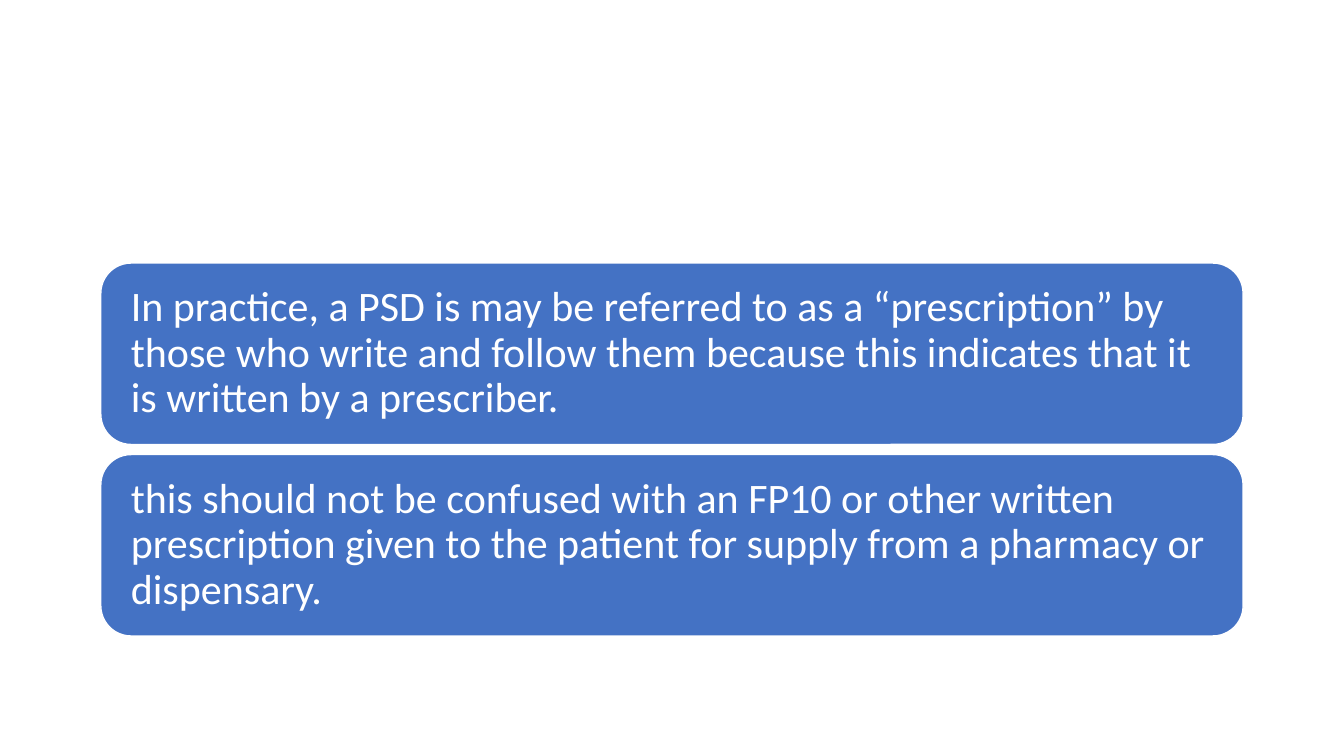
from pptx import Presentation
from pptx.dml.color import RGBColor
from pptx.enum.shapes import MSO_SHAPE
from pptx.enum.text import MSO_ANCHOR, PP_ALIGN
from pptx.util import Inches, Pt

COLORS = {"card": "4472C4", "white": "FFFFFF"}
STATEMENTS = [
    "In practice, a PSD is may be referred to as a “prescription” by those who write "
    "and follow them because this indicates that it is written by a prescriber.",
    "this should not be confused with an FP10 or other written prescription given to "
    "the patient for supply from a pharmacy or dispensary.",
]


def color(name):
    return RGBColor.from_string(COLORS[name])


def write_text(frame, text, *, size, font, ink, inset, line_spacing):
    frame.word_wrap = True
    frame.vertical_anchor = MSO_ANCHOR.MIDDLE
    frame.margin_left = frame.margin_right = Inches(inset)
    frame.margin_top = frame.margin_bottom = Inches(inset)
    paragraph = frame.paragraphs[0]
    paragraph.alignment = PP_ALIGN.LEFT
    paragraph.line_spacing = line_spacing
    run = paragraph.add_run()
    run.text = text
    run.font.size = Pt(size)
    run.font.name = font
    run.font.color.rgb = color(ink)


def add_statements(slide, statements, left, top, width, height, gap=0.1):
    card_height = (height - gap * (len(statements) - 1)) / len(statements)
    for index, statement in enumerate(statements):
        card_top = top + index * (card_height + gap)
        card = slide.shapes.add_shape(
            MSO_SHAPE.ROUNDED_RECTANGLE,
            Inches(left), Inches(card_top), Inches(width), Inches(card_height),
        )
        card.shadow.inherit = False
        card.fill.solid()
        card.fill.fore_color.rgb = color("card")
        card.line.color.rgb = color("white")
        card.line.width = Pt(1)
        write_text(card.text_frame, statement, size=30, font="Calibri",
                   ink="white", inset=0.12 + 0.09 - 0.09, line_spacing=0.9)
        card.text_frame.margin_left = card.text_frame.margin_right = Inches(0.21)


def main():
    presentation = Presentation()
    presentation.slide_width = Inches(13.33)
    presentation.slide_height = Inches(7.5)
    slide = presentation.slides.add_slide(presentation.slide_layouts[6])
    add_statements(slide, STATEMENTS, left=1, top=2.61, width=11.33, height=3.7)
    presentation.save("out.pptx")


if __name__ == "__main__":
    main()
